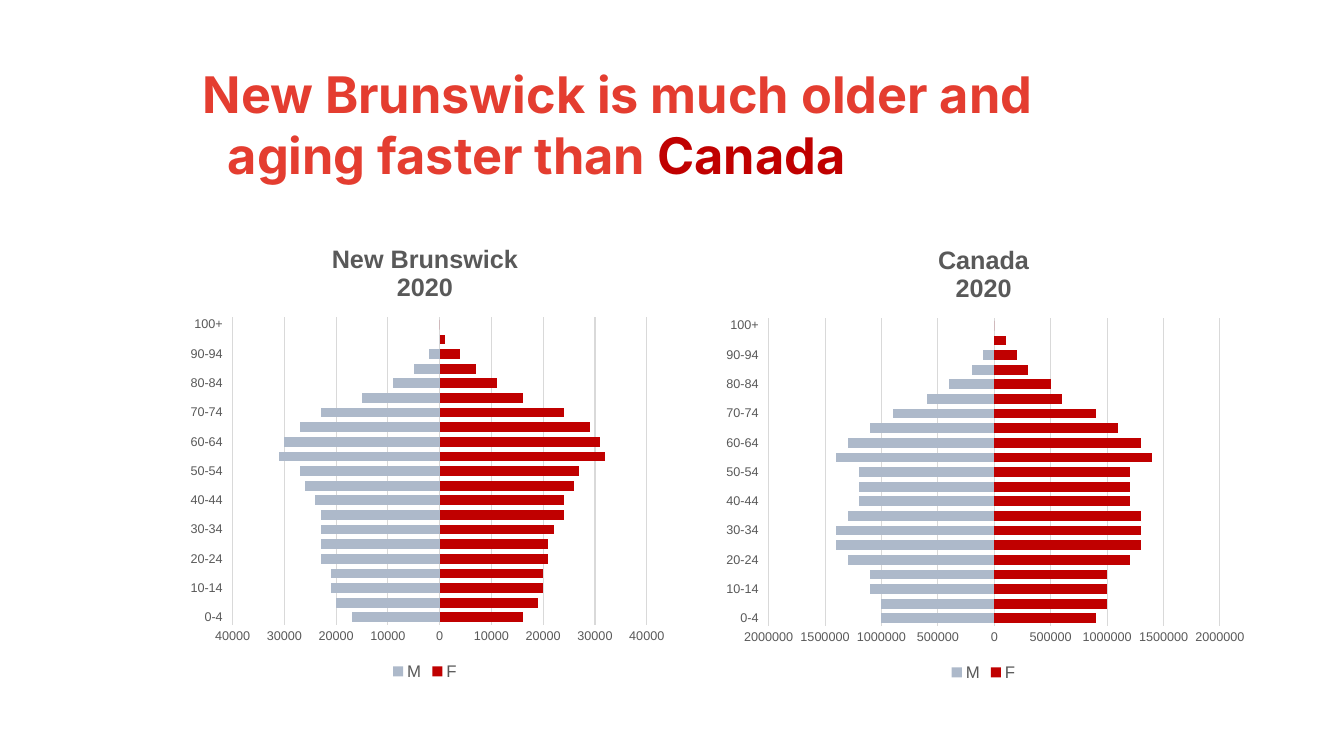
from lxml import etree
from pptx import Presentation
from pptx.chart.data import CategoryChartData
from pptx.dml.color import RGBColor
from pptx.enum.chart import (XL_CHART_TYPE as ChartType, XL_LEGEND_POSITION as LegendPosition,
                             XL_TICK_LABEL_POSITION as LabelPosition, XL_TICK_MARK as TickMark)
from pptx.enum.text import MSO_ANCHOR, MSO_AUTO_SIZE, PP_ALIGN
from pptx.oxml import parse_xml
from pptx.oxml.ns import nsdecls, qn
from pptx.util import Inches, Pt

RED, CORAL, BLUE_GREY = "C00000", "E43D30", "ADB9CA"
TEXT_GREY, GRID_GREY = "595959", "D9D9D9"
AGE_GROUPS = [f"{age}-{age + 4}" for age in range(0, 100, 5)] + ["100+"]

# Population in thousands, youngest age group first
BRUNSWICK_MEN = [17, 20, 21, 21, 23, 23, 23, 23, 24, 26, 27,
                 31, 30, 27, 23, 15, 9, 5, 2, 0, 0]
BRUNSWICK_WOMEN = [16, 19, 20, 20, 21, 21, 22, 24, 24, 26, 27,
                   32, 31, 29, 24, 16, 11, 7, 4, 1, 0]
CANADA_MEN = [1000, 1000, 1100, 1100, 1300, 1400, 1400, 1300, 1200, 1200, 1200,
              1400, 1300, 1100, 900, 600, 400, 200, 100, 0, 0]
CANADA_WOMEN = [900, 1000, 1000, 1000, 1200, 1300, 1300, 1300, 1200, 1200, 1200,
                1400, 1300, 1100, 900, 600, 500, 300, 200, 100, 0]


def color(hex_string):
    return RGBColor.from_string(hex_string)


def style_font(font, size, hex_color, name="Arial", bold=False):
    font.name, font.size, font.bold = name, Pt(size), bold
    font.color.rgb = color(hex_color)


def style_line(line):
    line.color.rgb = color(GRID_GREY)
    line.width = Pt(0.75)


def add_heading(slide, left, top, width, height):
    heading = slide.shapes.title
    heading.left, heading.top = Inches(left), Inches(top)
    heading.width, heading.height = Inches(width), Inches(height)
    frame = heading.text_frame
    frame.word_wrap = True
    frame.auto_size = MSO_AUTO_SIZE.NONE
    frame.vertical_anchor = MSO_ANCHOR.TOP
    paragraph = frame.paragraphs[0]
    paragraph.alignment = PP_ALIGN.LEFT
    properties = paragraph._p.get_or_add_pPr()
    properties.set("marL", str(Inches(0.5)))
    properties.set("indent", str(Inches(-0.25)))
    for text, hex_color in (("New Brunswick is much older and aging faster than ", CORAL),
                            ("Canada", RED)):
        run = paragraph.add_run()
        run.text = text
        style_font(run.font, 36, hex_color, "Inter", True)


def set_plot_layout(chart, left, top, width, height):
    """Fix the inner plot area, in fractions of the chart."""
    plot_area = chart._chartSpace.chart.plotArea
    for layout in plot_area.findall(qn("c:layout")):
        plot_area.remove(layout)
    plot_area.insert(0, parse_xml(
        f'<c:layout {nsdecls("c")}><c:manualLayout><c:layoutTarget val="inner"/>'
        f'<c:xMode val="edge"/><c:yMode val="edge"/><c:x val="{left}"/><c:y val="{top}"/>'
        f'<c:w val="{width}"/><c:h val="{height}"/></c:manualLayout></c:layout>'))


def style_axes(chart, limit, step):
    ages, people = chart.category_axis, chart.value_axis
    for axis in (ages, people):
        axis.major_tick_mark = axis.minor_tick_mark = TickMark.NONE
        style_font(axis.tick_labels.font, 9, TEXT_GREY)
    ages.tick_label_position = LabelPosition.LOW
    style_line(ages.format.line)
    label_skip = etree.Element(qn("c:tickLblSkip"), val="2")
    ages._element.find(qn("c:noMultiLvlLbl")).addprevious(label_skip)

    people.minimum_scale, people.maximum_scale = -limit, limit
    people.major_unit = step
    people.tick_labels.number_format = "0;0"
    people.tick_labels.number_format_is_linked = False
    people.format.line.fill.background()
    people.has_major_gridlines = True
    style_line(people.major_gridlines.format.line)


def add_pyramid(slide, left, top, width, height, region, men, women, limit, step):
    """Add a population pyramid with men to the left of zero and women to the right."""
    data = CategoryChartData()
    data.categories = AGE_GROUPS
    data.add_series("M", [-1000 * count for count in men])
    data.add_series("F", [1000 * count for count in women])
    chart = slide.shapes.add_chart(ChartType.BAR_STACKED, Inches(left), Inches(top),
                                   Inches(width), Inches(height), data).chart
    style_font(chart.font, 10, "000000")

    title = chart.chart_title.text_frame
    title.text = f"{region}\n2020"
    for paragraph in title.paragraphs:
        style_font(paragraph.runs[0].font, 18, TEXT_GREY, bold=True)
    chart.chart_title.include_in_layout = False

    chart.has_legend = True
    chart.legend.position = LegendPosition.BOTTOM
    chart.legend.include_in_layout = False
    style_font(chart.legend.font, 12, TEXT_GREY)

    plot = chart.plots[0]
    plot.gap_width, plot.overlap = 50, 100
    plot.vary_by_categories = False
    for series, hex_color in zip(plot.series, (BLUE_GREY, RED)):
        series.invert_if_negative = False
        series.format.fill.solid()
        series.format.fill.fore_color.rgb = color(hex_color)
    style_axes(chart, limit, step)
    set_plot_layout(chart, round(0.52 / width, 2), 0.2, 0.84, 0.67)


def main():
    presentation = Presentation()
    presentation.slide_width, presentation.slide_height = Inches(13.33), Inches(7.5)
    slide = presentation.slides.add_slide(presentation.slide_layouts[5])
    add_heading(slide, 1.66, 0.58, 9.71, 1.3)
    add_pyramid(slide, 1.77, 2.24, 4.89, 4.55, "New Brunswick",
                BRUNSWICK_MEN, BRUNSWICK_WOMEN, 40000, 10000)
    add_pyramid(slide, 7.09, 2.25, 5.33, 4.55, "Canada",
                CANADA_MEN, CANADA_WOMEN, 2000000, 500000)
    presentation.save("out.pptx")


if __name__ == "__main__":
    main()
